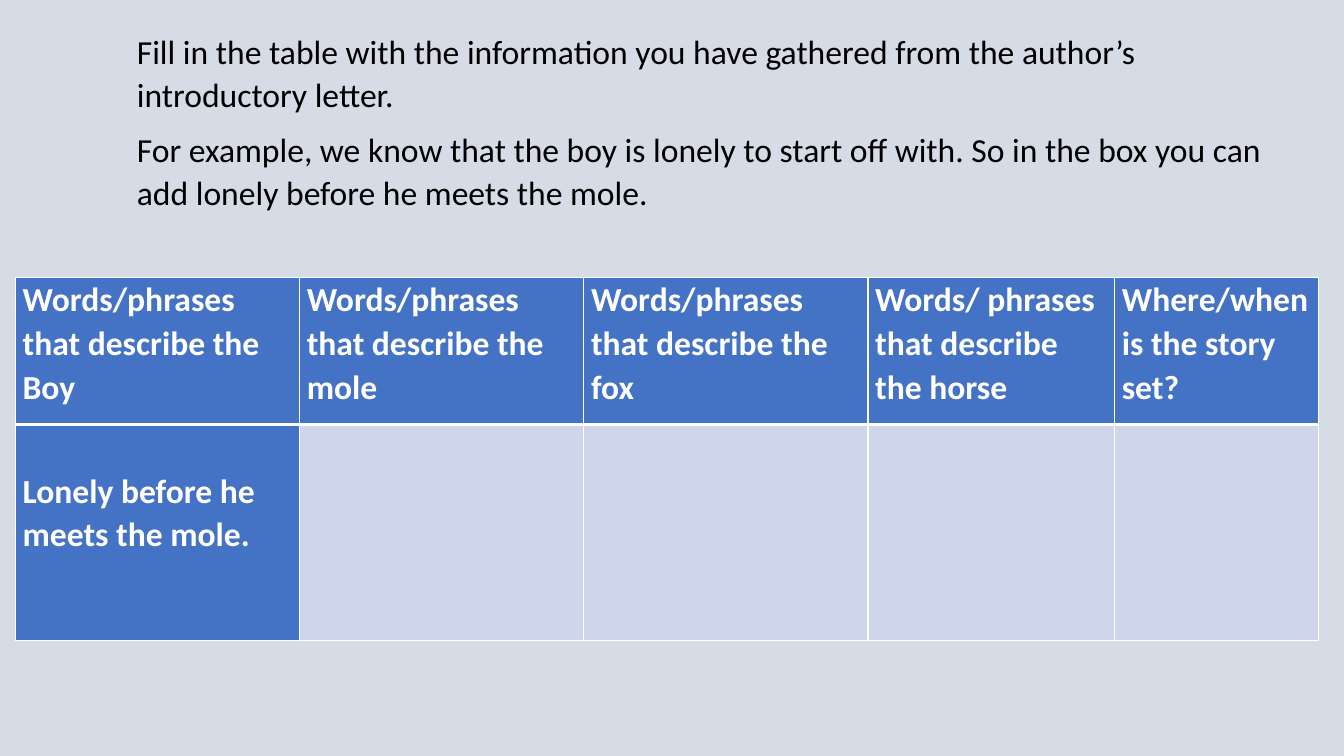
from dataclasses import dataclass

from lxml import etree
from pptx import Presentation
from pptx.dml import color
from pptx.enum import text
from pptx.oxml import ns
from pptx.util import Pt

COLOURS = {
    "page": "D6DCE5",
    "ink": "000000",
    "white": "FFFFFF",
    "heading": "4472C4",
    "answer": "CFD5EA",
}
TEXT_LINE = 31.3
THIN, THICK = 1, 3


@dataclass(frozen=True)
class Column:
    heading: str
    width: float
    answer: str = ""


INSTRUCTIONS = (
    "Fill in the table with the information you have gathered from the author’s introductory letter.",
    "For example, we know that the boy is lonely to start off with. "
    "So in the box you can add lonely before he meets the mole.",
)
COLUMNS = (
    Column("Words/phrases that describe the Boy", 203, "Lonely before he meets the mole."),
    Column("Words/phrases that describe the mole", 203),
    Column("Words/phrases that describe the fox", 203),
    Column("Words/ phrases that describe the horse", 176.2),
    Column("Where/when is the story set?", 145.4),
)
ROW_HEIGHTS = (105.2, 154.2)


def rgb(name: str) -> color.RGBColor:
    return color.RGBColor.from_string(COLOURS[name])


def write(para, words: str, *, colour: str, bold: bool = False, after: float = 0) -> None:
    para.line_spacing = 1.07
    para.space_after = Pt(after)
    span = para.add_run()
    span.text = words
    span.font.name = "Calibri"
    span.font.size = Pt(24)
    span.font.bold = bold
    span.font.color.rgb = rgb(colour)


def add_instructions(page) -> None:
    box = page.shapes.add_textbox(Pt(90.7), Pt(16.6), Pt(830.9), Pt(138.2))
    frame = box.text_frame
    frame.word_wrap = True
    frame.auto_size = text.MSO_AUTO_SIZE.SHAPE_TO_FIT_TEXT
    for index, words in enumerate(INSTRUCTIONS):
        para = frame.add_paragraph() if index else frame.paragraphs[0]
        write(para, words, colour="ink", after=8)


def add_borders(cell, *, top: float, bottom: float) -> None:
    properties = cell._tc.get_or_add_tcPr()
    widths = {"lnL": THIN, "lnR": THIN, "lnT": top, "lnB": bottom}
    for index, (side, width) in enumerate(widths.items()):
        line = etree.Element(ns.qn(f"a:{side}"), w=str(Pt(width)))
        fill = etree.SubElement(line, ns.qn("a:solidFill"))
        etree.SubElement(fill, ns.qn("a:srgbClr"), val=COLOURS["white"])
        properties.insert(index, line)


def fill_cell(cell, words: str, *, fill: str, above: float, top: float, bottom: float) -> None:
    cell.margin_left = cell.margin_right = Pt(5.2)
    cell.margin_top, cell.margin_bottom = Pt(above), Pt(0)
    cell.fill.solid()
    cell.fill.fore_color.rgb = rgb(fill)
    add_borders(cell, top=top, bottom=bottom)
    if words:
        write(cell.text_frame.paragraphs[0], words, colour="white", bold=True)


def add_word_table(page) -> None:
    width = sum(column.width for column in COLUMNS)
    frame = page.shapes.add_table(
        len(ROW_HEIGHTS), len(COLUMNS), Pt(11), Pt(198), Pt(width), Pt(sum(ROW_HEIGHTS))
    )
    table = frame.table
    table.horz_banding = False
    for row, height in zip(table.rows, ROW_HEIGHTS):
        row.height = Pt(height)
    for index, column in enumerate(COLUMNS):
        table.columns[index].width = Pt(column.width)
        fill_cell(table.cell(0, index), column.heading, fill="heading", above=0, top=THIN, bottom=THICK)
        fill_cell(
            table.cell(1, index),
            column.answer,
            fill="heading" if column.answer else "answer",
            above=TEXT_LINE if column.answer else 0,
            top=THICK,
            bottom=THIN,
        )


def main() -> None:
    deck = Presentation()
    deck.slide_width, deck.slide_height = Pt(960), Pt(540)
    page = deck.slides.add_slide(deck.slide_layouts[6])
    page.background.fill.solid()
    page.background.fill.fore_color.rgb = rgb("page")
    add_instructions(page)
    add_word_table(page)
    deck.save("out.pptx")


if __name__ == "__main__":
    main()
